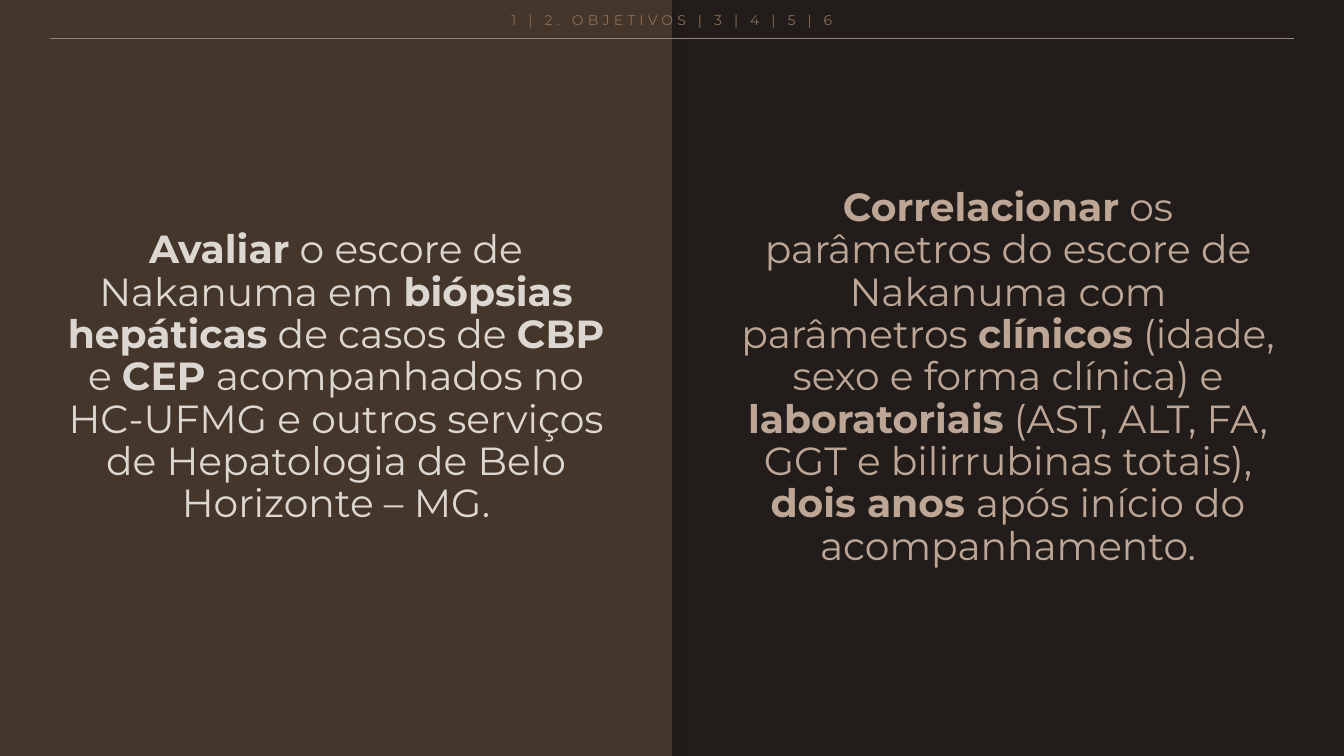
from dataclasses import dataclass

from lxml import etree
from pptx import Presentation
from pptx.dml.color import RGBColor
from pptx.enum.shapes import MSO_CONNECTOR, MSO_SHAPE
from pptx.enum.text import MSO_ANCHOR, PP_ALIGN
from pptx.oxml.ns import qn
from pptx.util import Inches, Pt

RECT = MSO_SHAPE.RECTANGLE
STRAIGHT = MSO_CONNECTOR.STRAIGHT
MIDDLE = MSO_ANCHOR.MIDDLE
CENTER = PP_ALIGN.CENTER


@dataclass(frozen=True)
class Theme:
    """Colours, font and type sizes of the deck."""
    font: str = "Montserrat"
    background: str = "E8E0DA"
    dark: str = "221D1A"
    brown: str = "45362B"
    sand: str = "BDA695"
    light: str = "DDD7D2"
    nav: str = "8B6D56"
    rule: str = "938177"
    body_size: int = 28
    nav_size: int = 10


THEME = Theme()
WIDTH, HEIGHT = 13.33, 7.5

NAVIGATION = "1 | 2. OBJETIVOS | 3 | 4 | 5 | 6"
EVALUATE = (
    "*Avaliar* o escore de Nakanuma em *biópsias hepáticas* de casos de *CBP* e *CEP* "
    "acompanhados no HC-UFMG e outros serviços de Hepatologia de Belo Horizonte – MG."
)
CORRELATE = (
    "*Correlacionar* os parâmetros do escore de Nakanuma com parâmetros *clínicos* "
    "(idade, sexo e forma clínica) e *laboratoriais* (AST, ALT, FA, GGT e bilirrubinas "
    "totais), *dois anos *após início do acompanhamento."
)


def set_attrs(obj, values):
    """Set each named attribute of an object."""
    for name, value in values.items():
        setattr(obj, name, value)


def write_text(tf, text, size, color):
    """Write one centred paragraph, with bold between asterisks."""
    set_attrs(tf, {"word_wrap": True, "vertical_anchor": MIDDLE})
    p = tf.paragraphs[0]
    set_attrs(p, {"alignment": CENTER, "line_spacing": 0.9, "space_before": Pt(10)})
    for i, part in enumerate(text.split("*")):
        if part:
            r = p.add_run()
            r.text = part
            set_attrs(r.font, {"name": THEME.font, "size": Pt(size), "bold": i % 2 == 1})
            r.font.color.rgb = RGBColor.from_string(color)
    return p


def add_soft_shadow(sp):
    """Give a shape a faint shadow that falls downwards."""
    sp.shadow.inherit = False
    effects = sp.element.spPr.find(qn("a:effectLst"))
    shadow = etree.SubElement(effects, qn("a:outerShdw"), blurRad=str(Pt(10)),
                              dist=str(Pt(9)), dir="5400000", rotWithShape="0")
    color = etree.SubElement(shadow, qn("a:srgbClr"), val="000000")
    etree.SubElement(color, qn("a:alpha"), val="18000")


def add_panel(s, box, text, fill, color):
    """Fill a box with a coloured panel and its centred statement."""
    sp = s.shapes.add_shape(RECT, *map(Inches, box))
    sp.fill.solid()
    sp.fill.fore_color.rgb = RGBColor.from_string(fill)
    sp.line.fill.background()
    add_soft_shadow(sp)
    tf = sp.text_frame
    set_attrs(tf, {"margin_left": Inches(0.67), "margin_right": Inches(0.67),
                   "margin_top": Inches(0.12), "margin_bottom": Inches(0.12)})
    write_text(tf, text, THEME.body_size, color)


def add_navigation(s, box):
    """Place the section trail in a box with a thin rule beneath it."""
    left, top, width, height = box
    sp = s.shapes.add_textbox(*map(Inches, box))
    p = write_text(sp.text_frame, NAVIGATION, THEME.nav_size, THEME.nav)
    for r in p.runs:
        r.font._element.set("spc", "300")
    y = Inches(top + height + 0.05)
    line = s.shapes.add_connector(STRAIGHT, Inches(left), y, Inches(left + width), y)
    line.line.width = Pt(0.25)
    line.line.color.rgb = RGBColor.from_string(THEME.rule)
    etree.SubElement(line.element.spPr, qn("a:effectLst"))


def add_objectives_slide(prs):
    """Build the slide with two objectives side by side."""
    s = prs.slides.add_slide(prs.slide_layouts[6])
    s.background.fill.solid()
    s.background.fill.fore_color.rgb = RGBColor.from_string(THEME.background)
    half = WIDTH / 2
    add_panel(s, (half, 0, half, HEIGHT), CORRELATE, THEME.dark, THEME.sand)
    add_panel(s, (0, 0, half, HEIGHT), EVALUATE, THEME.brown, THEME.light)
    add_navigation(s, (0.5, 0.08, WIDTH - 1, 0.25))


def main():
    """Create the presentation and save it."""
    prs = Presentation()
    set_attrs(prs, {"slide_width": Inches(WIDTH), "slide_height": Inches(HEIGHT)})
    add_objectives_slide(prs)
    prs.save("out.pptx")


if __name__ == "__main__":
    main()
